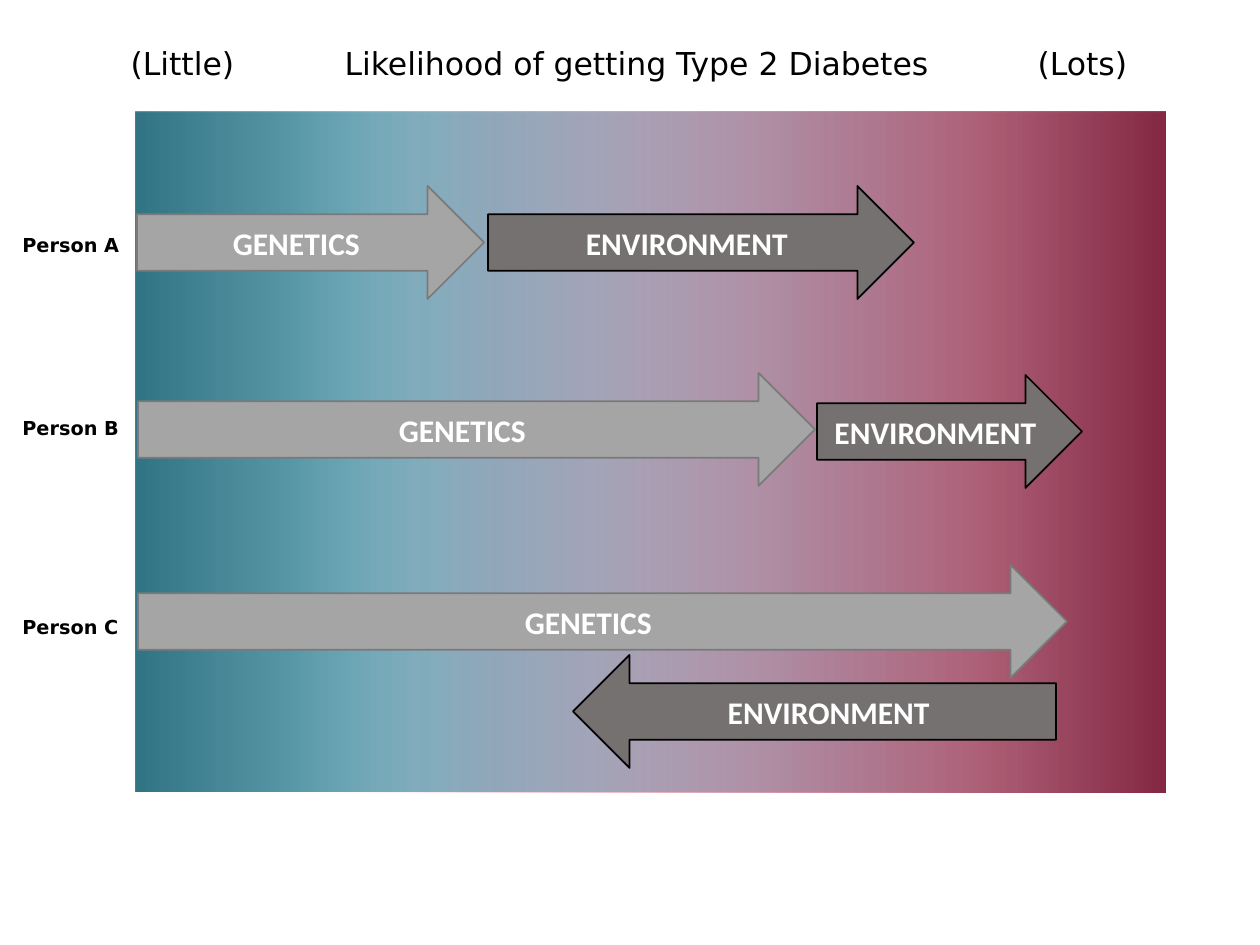
"""Build a slide on how genetics and environment shape the risk of type 2 diabetes."""
from dataclasses import dataclass

from lxml import etree
from pptx import Presentation
from pptx import util as u
from pptx.dml.color import RGBColor
from pptx.enum import shapes, text
from pptx.oxml.ns import qn

PX = 914400 / 126
COLORS = {
    "genetics": "A5A5A5", "genetics_line": "7A7A7A",
    "environment": "767171", "environment_line": "000000",
    "white": "FFFFFF", "black": "000000",
    "teal": "327484", "aqua": "76CFE5", "wine": "842844", "rose": "C75578",
}
RIGHT = shapes.MSO_SHAPE.RIGHT_ARROW
LEFT = shapes.MSO_SHAPE.LEFT_ARROW
ARROW_HEIGHT = 113


@dataclass
class Stop:
    position: int
    color: str
    alpha: int = 100


@dataclass
class Band:
    left: int
    rotation: int
    stops: list[Stop]


@dataclass
class Arrow:
    factor: str
    left: int
    top: int
    width: int
    preset: shapes.MSO_SHAPE = RIGHT


@dataclass
class Label:
    words: str
    top: int


BANDS = [
    Band(136, 0, [Stop(0, "teal"), Stop(65, "aqua", 53), Stop(86, "white")]),
    Band(189, 180, [Stop(0, "wine"), Stop(70, "rose", 19), Stop(89, "white", 0)]),
]
ARROWS = [
    Arrow("genetics", 137, 186, 347),
    Arrow("genetics", 138, 373, 677),
    Arrow("genetics", 138, 565, 929),
    Arrow("environment", 488, 186, 426),
    Arrow("environment", 817, 375, 265),
    Arrow("environment", 573, 655, 483, LEFT),
]
LABELS = [Label("Person A", 227), Label("Person B", 410), Label("Person C", 609)]
TITLE_PARTS = ["(Little)", "Likelihood of getting Type 2 Diabetes", "(Lots)"]
TITLE_TABS = [214, 907]


def emu(px: int) -> u.Emu:
    return u.Emu(round(px * PX))


def rgb(name: str) -> RGBColor:
    return RGBColor.from_string(COLORS[name])


def add_span(para, words: str, size: int, font: str, color: str, bold: bool) -> None:
    span = para.add_run()
    span.text = words
    span.font.size = u.Pt(size)
    span.font.name = font
    span.font.bold = bold
    span.font.color.rgb = rgb(color)


def add_band(page, band: Band) -> None:
    box = page.shapes.add_shape(
        shapes.MSO_SHAPE.RECTANGLE, emu(band.left), emu(112), emu(976), emu(680))
    box.shadow.inherit = False
    box.rotation = band.rotation
    box.line.fill.background()
    box.fill.gradient()
    box.fill.gradient_angle = 0
    stop_list = box._element.spPr.find(qn("a:gradFill")).find(qn("a:gsLst"))
    for old in list(stop_list):
        stop_list.remove(old)
    for stop in band.stops:
        mark = etree.SubElement(stop_list, qn("a:gs"), pos=str(stop.position * 1000))
        color = etree.SubElement(mark, qn("a:srgbClr"), val=COLORS[stop.color])
        if stop.alpha < 100:
            etree.SubElement(color, qn("a:alpha"), val=str(stop.alpha * 1000))


def add_arrow(page, arrow: Arrow) -> None:
    box = page.shapes.add_shape(
        arrow.preset, emu(arrow.left), emu(arrow.top), emu(arrow.width), emu(ARROW_HEIGHT))
    box.shadow.inherit = False
    box.fill.solid()
    box.fill.fore_color.rgb = rgb(arrow.factor)
    box.line.color.rgb = rgb(f"{arrow.factor}_line")
    box.line.width = u.Pt(1)
    box.text_frame.word_wrap = True
    box.text_frame.vertical_anchor = text.MSO_ANCHOR.MIDDLE
    para = box.text_frame.paragraphs[0]
    para.alignment = text.PP_ALIGN.CENTER
    add_span(para, arrow.factor.upper(), 18, "Calibri", "white", True)


def add_label(page, label: Label) -> None:
    box = page.shapes.add_textbox(emu(10), emu(label.top), emu(127), emu(37))
    box.text_frame.word_wrap = True
    add_span(box.text_frame.paragraphs[0], label.words, 11, "DejaVu Sans", "black", True)


def fill_title(page) -> None:
    box = page.shapes.title
    box.left, box.top, box.width, box.height = emu(118), emu(38), emu(1089), emu(50)
    frame = box.text_frame
    frame.word_wrap = True
    frame.auto_size = text.MSO_AUTO_SIZE.NONE
    frame.vertical_anchor = text.MSO_ANCHOR.TOP
    para = frame.paragraphs[0]
    para.alignment = text.PP_ALIGN.LEFT
    tabs = etree.SubElement(para._p.get_or_add_pPr(), qn("a:tabLst"))
    for position in TITLE_TABS:
        etree.SubElement(tabs, qn("a:tab"), pos=str(emu(position)), algn="l")
    add_span(para, "\t".join(TITLE_PARTS), 18, "DejaVu Sans", "black", False)


def main() -> None:
    deck = Presentation()
    deck.slide_width, deck.slide_height = emu(1260), emu(945)
    page = deck.slides.add_slide(deck.slide_layouts[5])
    fill_title(page)
    for band in BANDS:
        add_band(page, band)
    for arrow in ARROWS:
        add_arrow(page, arrow)
    for label in LABELS:
        add_label(page, label)
    deck.save("out.pptx")


if __name__ == "__main__":
    main()
